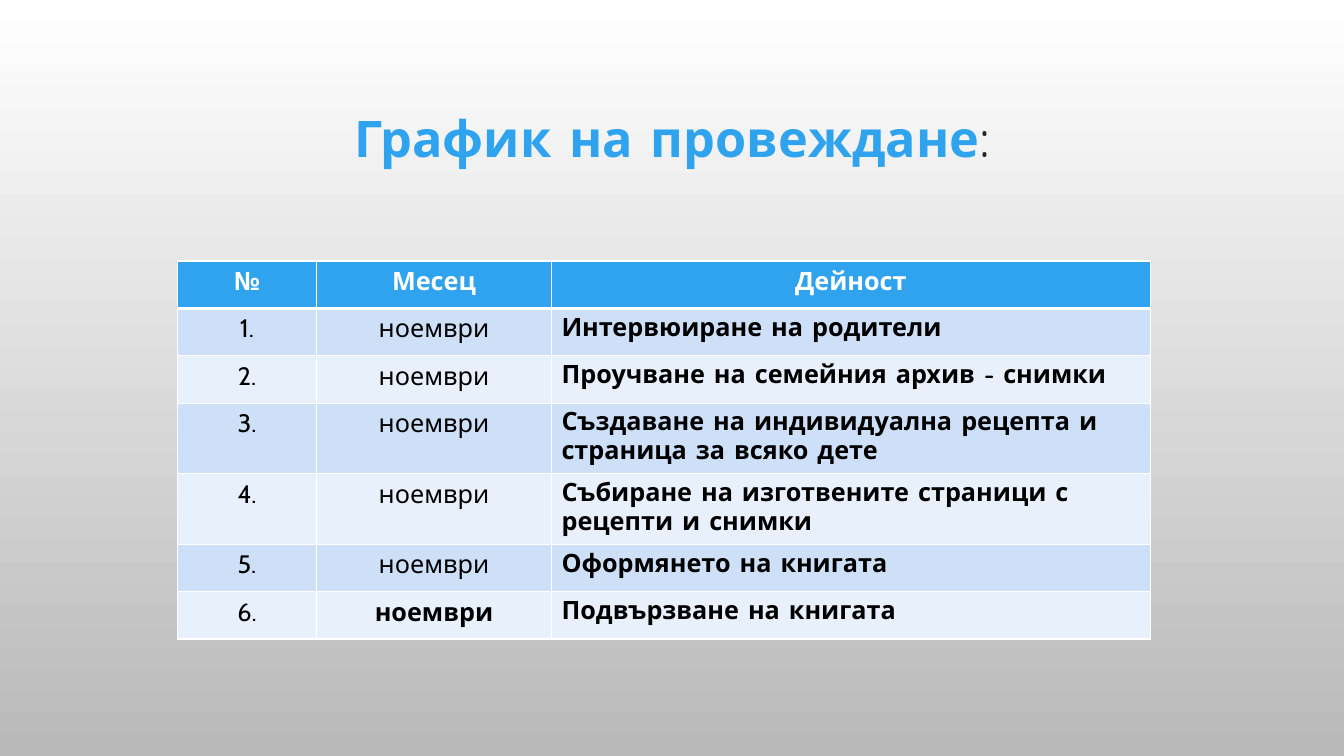
from lxml import etree
from pptx import Presentation
from pptx.dml.color import RGBColor
from pptx.enum.text import MSO_ANCHOR, PP_ALIGN
from pptx.oxml.ns import qn
from pptx.util import Inches, Pt

CENTER, LEFT = PP_ALIGN.CENTER, PP_ALIGN.LEFT
MIDDLE = MSO_ANCHOR.MIDDLE

THEME = {
    "accent": "2FA3EE", "ink": "000000", "colon": "262626", "white": "FFFFFF",
    "bands": ("CDE0F8", "E8F0FC"), "page_end": "B9B9B9",
    "title_font": "Comic Neue", "table_font": "Cabin", "light_font": "Quicksand",
    "title_size": 36, "table_size": 18,
    "thin": 1, "thick": 3,
}
COLUMNS = (1.38, 2.33, 5.94)
ROW_HEIGHT = 0.47
HEADINGS = ("№", "Месец", "Дейност")
MONTH = "ноември"
ACTIVITIES = (
    "Интервюиране на родители",
    "Проучване на семейния архив - снимки",
    "Създаване на индивидуална рецепта и страница за всяко дете",
    "Събиране на изготвените страници с рецепти и снимки",
    "Оформянето на книгата",
    "Подвързване на книгата",
)


def add_text(para, text, font=THEME["table_font"], size=THEME["table_size"],
             color=THEME["ink"], bold=False, align=CENTER):
    para.alignment = align
    span = para.add_run()
    span.text = text
    span.font.name = font
    span.font.size = Pt(size)
    span.font.bold = bold
    span.font.color.rgb = RGBColor.from_string(color)


def style_cell(cell, fill, top, bottom):
    """Draw the white borders, then the fill, in the order the schema needs."""
    properties = cell._tc.get_or_add_tcPr()
    widths = {"a:lnL": THEME["thin"], "a:lnR": THEME["thin"], "a:lnT": top, "a:lnB": bottom}
    for side, width in widths.items():
        line = etree.SubElement(properties, qn(side), w=str(Pt(width)))
        solid = etree.SubElement(line, qn("a:solidFill"))
        etree.SubElement(solid, qn("a:srgbClr"), val=THEME["white"])
    cell.fill.solid()
    cell.fill.fore_color.rgb = RGBColor.from_string(fill)


# Deck and page
deck = Presentation()
deck.slide_width, deck.slide_height = Inches(13.33), Inches(7.5)
page = deck.slides.add_slide(deck.slide_layouts[6])

# Background, white at the top to grey at the bottom
background = page.background.fill
background.gradient()
background.gradient_angle = 270
for stop, position, color in zip(background.gradient_stops, (0, 1),
                                 (THEME["white"], THEME["page_end"])):
    stop.position = position
    stop.color.rgb = RGBColor.from_string(color)

# Title
title = page.shapes.add_textbox(Inches(1), Inches(0.68), Inches(11.33), Inches(1.45))
title.text_frame.word_wrap = True
title.text_frame.vertical_anchor = MIDDLE
para = title.text_frame.paragraphs[0]
para.line_spacing = 0.9
add_text(para, "График на провеждане", font=THEME["title_font"],
         size=THEME["title_size"], color=THEME["accent"], bold=True)
add_text(para, ":", font=THEME["light_font"], size=THEME["title_size"], color=THEME["colon"])

# Schedule table
row_count = len(ACTIVITIES) + 1
schedule = page.shapes.add_table(
    row_count, len(COLUMNS), Inches(1.76), Inches(2.59),
    Inches(sum(COLUMNS)), Inches(ROW_HEIGHT * row_count)).table
for column, width in zip(schedule.columns, COLUMNS):
    column.width = Inches(width)
for row in schedule.rows:
    row.height = Inches(ROW_HEIGHT)

# Header row
for cell, heading in zip(schedule.rows[0].cells, HEADINGS):
    style_cell(cell, THEME["accent"], THEME["thin"], THEME["thick"])
    add_text(cell.text_frame.paragraphs[0], heading, color=THEME["white"], bold=True)

# Activity rows, in alternating bands; the last month stands out
for number, activity in enumerate(ACTIVITIES, start=1):
    last = number == len(ACTIVITIES)
    month_font = THEME["light_font"] if last else THEME["table_font"]
    contents = (
        (f"{number}.", {}),
        (MONTH, {"font": month_font, "bold": last}),
        (activity, {"font": THEME["title_font"], "bold": True, "align": LEFT}),
    )
    top = THEME["thick"] if number == 1 else THEME["thin"]
    for cell, (text, text_format) in zip(schedule.rows[number].cells, contents):
        style_cell(cell, THEME["bands"][(number - 1) % 2], top, THEME["thin"])
        add_text(cell.text_frame.paragraphs[0], text, **text_format)

deck.save("out.pptx")
